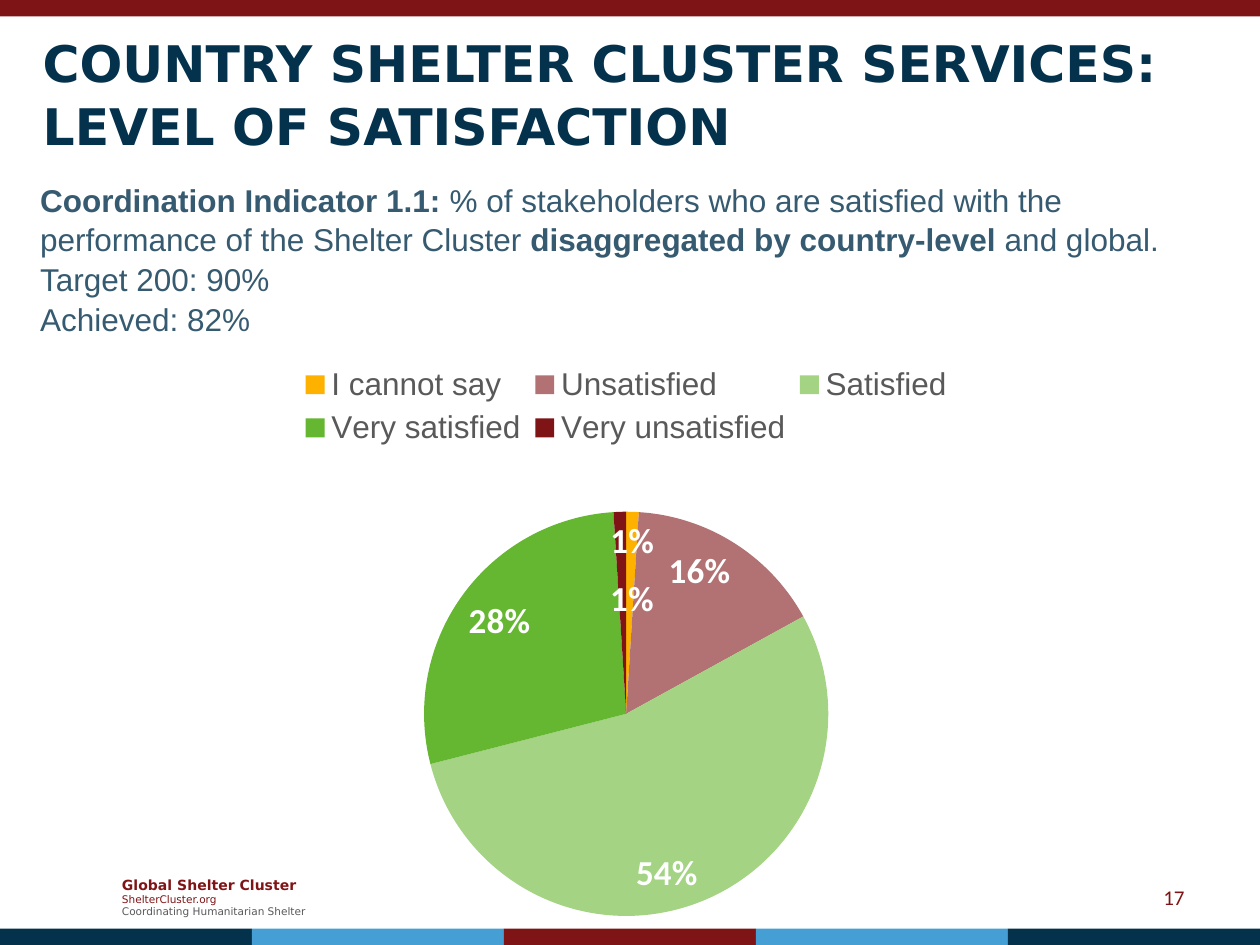
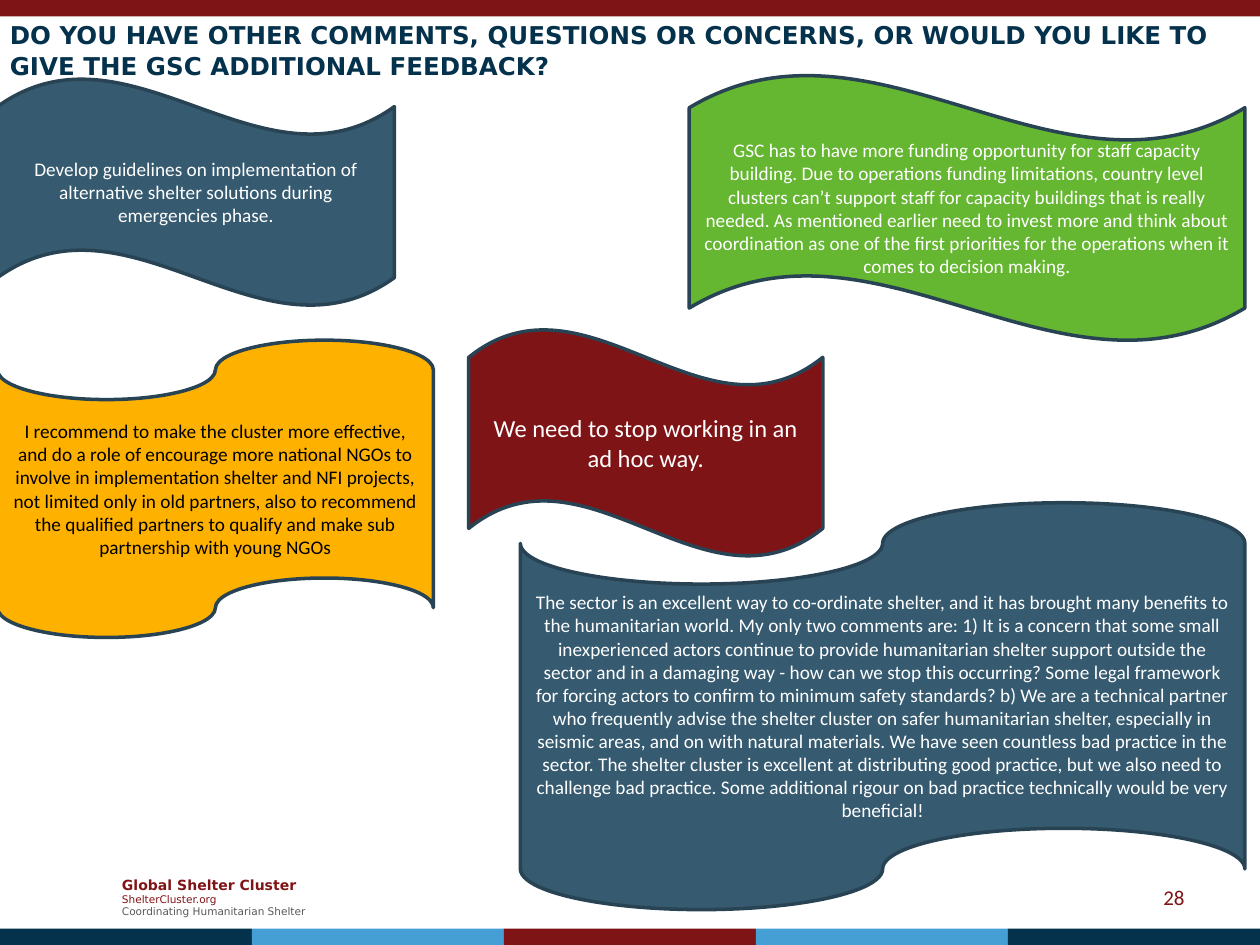
from copy import deepcopy
from dataclasses import dataclass

from pptx import Presentation
from pptx.chart.data import CategoryChartData
from pptx.dml.color import RGBColor
from pptx.enum.chart import XL_CHART_TYPE, XL_LABEL_POSITION, XL_LEGEND_POSITION
from pptx.enum.shapes import MSO_SHAPE
from pptx.enum.text import MSO_ANCHOR, PP_ALIGN
from pptx.oxml import parse_xml
from pptx.oxml.ns import qn
from pptx.util import Emu, Inches, Pt

PIE = XL_CHART_TYPE.PIE
INSIDE_END = XL_LABEL_POSITION.INSIDE_END
LEGEND_TOP = XL_LEGEND_POSITION.TOP
RECT, WAVE, TAPE = MSO_SHAPE.RECTANGLE, MSO_SHAPE.WAVE, MSO_SHAPE.FLOWCHART_PUNCHED_TAPE
TOP, MIDDLE = MSO_ANCHOR.TOP, MSO_ANCHOR.MIDDLE
LEFT, CENTER, RIGHT = PP_ALIGN.LEFT, PP_ALIGN.CENTER, PP_ALIGN.RIGHT

SLIDE_WIDTH, SLIDE_HEIGHT = Inches(10), Inches(7.5)
COLUMNS, ROWS = 100, 75  # square grid cells
CHART_NS = "http://schemas.openxmlformats.org/drawingml/2006/chart"

NAVY, SKY, MAROON = "04314C", "459FD5", "7F1416"
SLATE, GREEN, AMBER = "365A70", "65B630", "FFB100"
ROSE, PALE_GREEN, OUTLINE = "B27273", "A3D383", "284353"
GREY, WHITE, BLACK = "595959", "FFFFFF", "000000"
HEADING_FONT, BODY_FONT, NOTE_FONT = "DejaVu Sans", "Arial", "Calibri"
LOOSE = 1.05


@dataclass(frozen=True)
class Box:
    """A place on the slide, in grid columns and rows."""
    col: float
    row: float
    cols: float
    rows: float

    def emu(self) -> tuple[Emu, Emu, Emu, Emu]:
        cell_width, cell_height = SLIDE_WIDTH / COLUMNS, SLIDE_HEIGHT / ROWS
        return (Emu(round(self.col * cell_width)), Emu(round(self.row * cell_height)),
                Emu(round(self.cols * cell_width)), Emu(round(self.rows * cell_height)))


@dataclass(frozen=True)
class Style:
    font: str
    size: float
    color: str
    bold: bool = False


@dataclass(frozen=True)
class Run:
    text: str
    style: Style


@dataclass(frozen=True)
class Comment:
    outline: MSO_SHAPE
    box: Box
    fill: str
    text: str
    size: float = 11
    color: str = WHITE


@dataclass(frozen=True)
class Answer:
    label: str
    percent: int
    color: str


FOOTER_BOX = Box(8.7, 69, 17.3, 4.4)
NUMBER_BOX = Box(71.7, 69.2, 23.3, 4)
BAND_ROWS = 1.3
BAND_COLORS = (NAVY, SKY, MAROON, SKY, NAVY)
FOOTER = [
    [Run("Global Shelter Cluster", Style(HEADING_FONT, 8, MAROON, True))],
    [Run("ShelterCluster.org", Style(HEADING_FONT, 6, MAROON))],
    [Run("Coordinating Humanitarian Shelter", Style(HEADING_FONT, 6, GREY))],
]

PLAIN = Style(BODY_FONT, 18, SLATE)
STRONG = Style(BODY_FONT, 18, SLATE, True)
INDICATOR = [
    [Run("Coordination Indicator 1.1: ", STRONG),
     Run("% of stakeholders who are satisfied with the performance of the Shelter Cluster ", PLAIN),
     Run("disaggregated by country-level ", STRONG),
     Run("and global.", PLAIN)],
    [Run("Target 200: 90%", PLAIN)],
    [Run("Achieved: 82%", PLAIN)],
]
ANSWERS = [
    Answer("I cannot say", 1, AMBER),
    Answer("Unsatisfied", 16, ROSE),
    Answer("Satisfied", 54, PALE_GREEN),
    Answer("Very satisfied", 28, GREEN),
    Answer("Very unsatisfied", 1, MAROON),
]
COMMENTS = [
    Comment(WAVE, Box(-0.2, 6.2, 31.5, 18.1), SLATE,
            "Develop guidelines on implementation of alternative shelter solutions during "
            "emergencies phase."),
    Comment(WAVE, Box(54.7, 5.9, 44.1, 21.2), GREEN,
            "GSC has to have more funding opportunity for staff capacity building. Due to "
            "operations funding limitations, country level clusters can’t support staff for "
            "capacity buildings that is really needed. As mentioned earlier need to invest more "
            "and think about coordination as one of the first priorities for the operations when "
            "it comes to decision making."),
    Comment(TAPE, Box(-0.2, 27, 34.6, 23.6), AMBER,
            "I recommend to make the cluster more effective, and do a role of encourage more "
            "national NGOs to involve in implementation shelter and NFI projects, not limited "
            "only in old partners, also to recommend the qualified partners to qualify and make "
            "sub partnership with young NGOs", color=BLACK),
    Comment(TAPE, Box(41.3, 39.9, 57.5, 32.3), SLATE,
            "The sector is an excellent way to co-ordinate shelter, and it has brought many "
            "benefits to the humanitarian world. My only two comments are: 1) It is a concern "
            "that some small inexperienced actors continue to provide humanitarian shelter "
            "support outside the sector and in a damaging way - how can we stop this occurring? "
            "Some legal framework for forcing actors to confirm to minimum safety standards? b) "
            "We are a technical partner who frequently advise the shelter cluster on safer "
            "humanitarian shelter, especially in seismic areas, and on with natural materials. "
            "We have seen countless bad practice in the sector. The shelter cluster is excellent "
            "at distributing good practice, but we also need to challenge bad practice. Some "
            "additional rigour on bad practice technically would be very beneficial!"),
    Comment(WAVE, Box(37.2, 26.1, 28.1, 18.1), MAROON,
            "We need to stop working in an ad hoc way.", size=14),
]


def rgb(color: str) -> RGBColor:
    return RGBColor.from_string(color)


def apply_style(font, style: Style) -> None:
    values = {"name": style.font, "size": Pt(style.size), "bold": style.bold}
    for attribute, value in values.items():
        setattr(font, attribute, value)
    font.color.rgb = rgb(style.color)


def write(frame, paragraphs: list[list[Run]], anchor=TOP, align=LEFT, spacing=1.0) -> None:
    for attribute, value in {"word_wrap": True, "vertical_anchor": anchor}.items():
        setattr(frame, attribute, value)
    for index, runs in enumerate(paragraphs):
        paragraph = frame.add_paragraph() if index else frame.paragraphs[0]
        for attribute, value in {"alignment": align, "line_spacing": spacing}.items():
            setattr(paragraph, attribute, value)
        for item in runs:
            run = paragraph.add_run()
            run.text = item.text
            apply_style(run.font, item.style)


def add_text(slide, box: Box, paragraphs: list[list[Run]], **layout) -> None:
    write(slide.shapes.add_textbox(*box.emu()).text_frame, paragraphs, **layout)


def add_filled(slide, outline: MSO_SHAPE, box: Box, fill: str):
    shape = slide.shapes.add_shape(outline, *box.emu())
    shape.shadow.inherit = False
    shape.fill.solid()
    shape.fill.fore_color.rgb = rgb(fill)
    shape.line.fill.background()
    return shape


def add_framed_slide(deck, number: int):
    """Add a blank slide with the shared footer, bands and page number."""
    slide = deck.slides.add_slide(deck.slide_layouts[6])
    add_text(slide, FOOTER_BOX, FOOTER, anchor=MIDDLE)
    add_filled(slide, RECT, Box(0, 0, COLUMNS, BAND_ROWS), MAROON)
    band_cols = COLUMNS / len(BAND_COLORS)
    for index, color in enumerate(BAND_COLORS):
        add_filled(slide, RECT, Box(index * band_cols, ROWS - BAND_ROWS, band_cols, BAND_ROWS), color)
    add_text(slide, NUMBER_BOX, [[Run(str(number), Style(NOTE_FONT, 12, MAROON))]],
             anchor=MIDDLE, align=RIGHT)
    return slide


def add_title(slide, box: Box, text: str, size: float) -> None:
    add_text(slide, box, [[Run(text, Style(HEADING_FONT, size, NAVY, True))]], spacing=LOOSE)


def manual_layout(x: float, y: float, w: float, h: float, inner: bool = False):
    """Chart layout element in shares of the chart's size."""
    target = '<c:layoutTarget val="inner"/>' if inner else ""
    return parse_xml(
        f'<c:layout xmlns:c="{CHART_NS}"><c:manualLayout>{target}'
        '<c:xMode val="edge"/><c:yMode val="edge"/>'
        f'<c:x val="{x}"/><c:y val="{y}"/><c:w val="{w}"/><c:h val="{h}"/>'
        '</c:manualLayout></c:layout>')


def replace_layout(parent, position: int, layout) -> None:
    for old in parent.findall(qn("c:layout")):
        parent.remove(old)
    parent.insert(position, layout)


def shift_label(labels, index: int, x: float, y: float) -> None:
    """Move one percent label by shares of the chart's size."""
    shown = "".join(f'<c:{name} val="{int(name == "showPercent")}"/>' for name in (
        "showLegendKey", "showVal", "showCatName", "showSerName", "showPercent", "showBubbleSize"))
    label = parse_xml(
        f'<c:dLbl xmlns:c="{CHART_NS}"><c:idx val="{index}"/><c:layout><c:manualLayout>'
        f'<c:x val="{x}"/><c:y val="{y}"/></c:manualLayout></c:layout>'
        f'<c:dLblPos val="inEnd"/>{shown}</c:dLbl>')
    label.insert(2, deepcopy(labels._element.find(qn("c:txPr"))))
    labels._element.insert(0, label)


def add_satisfaction_pie(slide, box: Box) -> None:
    data = CategoryChartData()
    data.categories = [answer.label for answer in ANSWERS]
    data.add_series("Series 1", [answer.percent for answer in ANSWERS])
    chart = slide.shapes.add_chart(PIE, *box.emu(), data).chart
    chart.has_title = False
    apply_style(chart.font, Style(NOTE_FONT, 10, BLACK))

    chart.has_legend = True
    legend = chart.legend
    legend.position = LEGEND_TOP
    legend.include_in_layout = False
    apply_style(legend.font, Style(BODY_FONT, 18, GREY))
    replace_layout(legend._element, 1, manual_layout(0.22, 0.02, 0.56, 0.16))

    plot = chart.plots[0]
    plot.vary_by_categories = True
    replace_layout(plot._element.getparent(), 0, manual_layout(0.33, 0.28, 0.34, 0.69, inner=True))
    series = plot.series[0]
    for index, answer in enumerate(ANSWERS):
        slice_fill = series.points[index].format.fill
        slice_fill.solid()
        slice_fill.fore_color.rgb = rgb(answer.color)

    labels = series.data_labels
    values = {"show_percentage": True, "show_value": False, "number_format": "0%",
              "number_format_is_linked": False, "position": INSIDE_END}
    for attribute, value in values.items():
        setattr(labels, attribute, value)
    apply_style(labels.font, Style(NOTE_FONT, 20, WHITE, True))
    shift_label(labels, len(ANSWERS) - 1, 0.01, 0.1)


def add_comment(slide, comment: Comment) -> None:
    shape = add_filled(slide, comment.outline, comment.box, comment.fill)
    shape.line.color.rgb = rgb(OUTLINE)
    shape.line.width = Pt(2)
    style = Style(NOTE_FONT, comment.size, comment.color)
    write(shape.text_frame, [[Run(comment.text, style)]], anchor=MIDDLE, align=CENTER)


def main() -> None:
    deck = Presentation()
    deck.slide_width, deck.slide_height = SLIDE_WIDTH, SLIDE_HEIGHT

    satisfaction = add_framed_slide(deck, 17)
    add_satisfaction_pie(satisfaction, Box(2.2, 27.6, 95, 46.5))
    add_text(satisfaction, Box(2.2, 13.7, 97.5, 13.1), INDICATOR, spacing=LOOSE)
    add_title(satisfaction, Box(2.4, 1.8, 97.5, 11.2),
              "COUNTRY SHELTER CLUSTER SERVICES: LEVEL OF SATISFACTION", 28.8)

    feedback = add_framed_slide(deck, 28)
    add_title(feedback, Box(-0.2, 1, 100, 7.7),
              "DO YOU HAVE OTHER COMMENTS, QUESTIONS OR CONCERNS, OR WOULD YOU LIKE TO GIVE "
              "THE GSC ADDITIONAL FEEDBACK?", 14)
    for comment in COMMENTS:
        add_comment(feedback, comment)

    deck.save("out.pptx")


if __name__ == "__main__":
    main()
